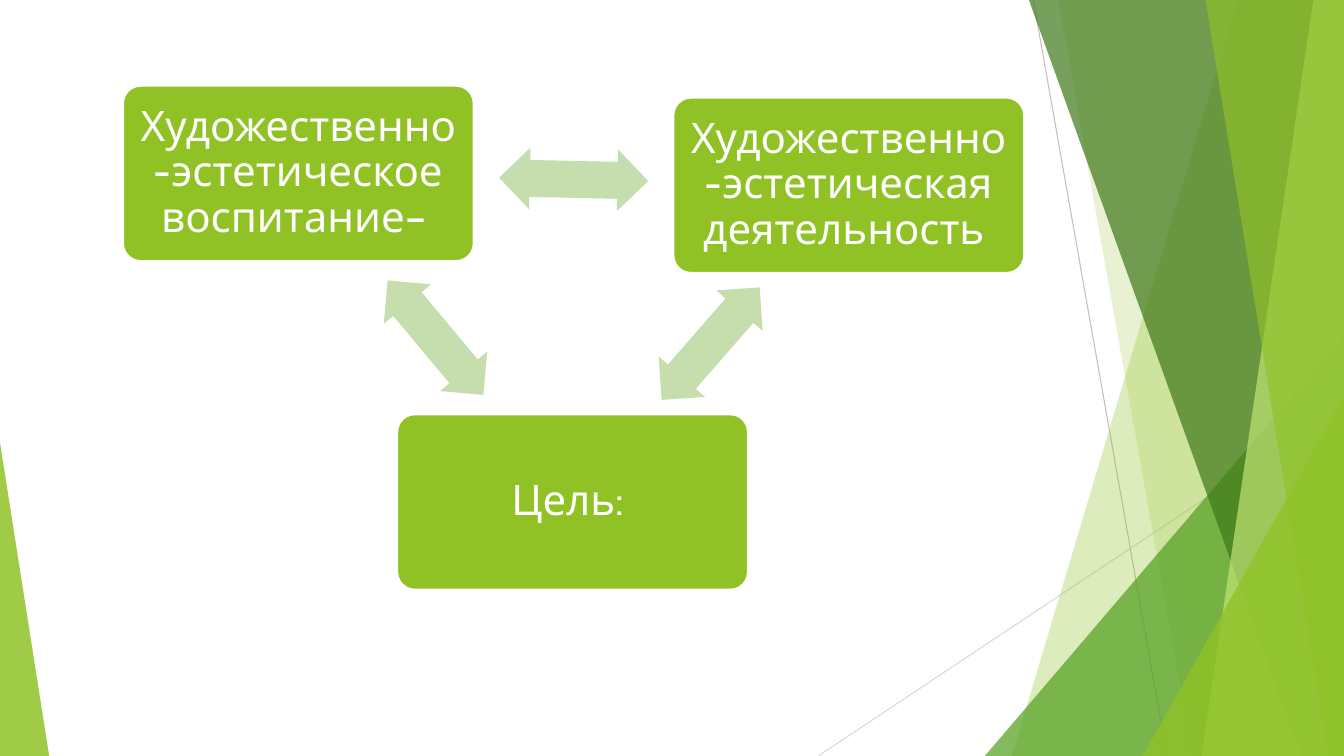
"""Build a slide with a three-part cycle of art education notions."""
import math

import pptx
import pptx.dml.color
import pptx.enum.shapes
import pptx.enum.text
import pptx.oxml.ns
import pptx.oxml.xmlchemy
import pptx.util
from pptx.util import Cm

WIDTH, HEIGHT = 33.87, 19.05
FONT = "Cabin"
COLORS = {
    "green": "90C226", "leaf": "54A021", "forest": "3F7819", "lime": "C0E474",
    "arrow": "C6DDAD", "white": "FFFFFF", "grey": "BFBFBF", "pale": "D9D9D9",
}

RULES = [
    ((26.04, 0), (29.41, HEIGHT), "grey"),
    ((WIDTH, 10.24), (20.62, HEIGHT), "pale"),
]
FACETS = [
    ("band", (31.19, 25.5), "green", 30),
    ("band", (26.67, 30.05), "green", 20),
    ("triangle", (24.82, 8.46, 9.05, 1), "leaf", 72),
    ("band", (25.93, 32.79), "forest", 70),
    ("band", (33.1, 30.28), "lime", 70),
    ("band", (30.38, 33.48), "green", 65),
    ("triangle", (28.8, 9.98, 5.07, 1), "green", 80),
    ("triangle", (0, 11.15, 1.24, 0), "green", 85),
]
CARD_SIZE = (8.84, 4.42)
CARDS = [
    ("Цель: ", 10.01, 10.44),
    ("Художественно-эстетическая деятельность ", 16.97, 2.46),
    ("Художественно-эстетическое воспитание– ", 3.1, 2.16),
]
ARROW_SIZE = (3.76, 1.55)
SHAPES = pptx.enum.shapes.MSO_SHAPE


def rgb(name):
    return pptx.dml.color.RGBColor.from_string(COLORS[name])


def paint(shape, color, opacity=100):
    shape.shadow.inherit = False
    shape.fill.solid()
    shape.fill.fore_color.rgb = rgb(color)
    shape.line.fill.background()
    if opacity < 100:
        tint = shape._element.spPr.find(".//" + pptx.oxml.ns.qn("a:srgbClr"))
        alpha = pptx.oxml.xmlchemy.OxmlElement("a:alpha")
        alpha.set("val", str(opacity * 1000))
        tint.append(alpha)


def add_rule(page, start, end, color):
    rule = page.shapes.add_connector(
        pptx.enum.shapes.MSO_CONNECTOR.STRAIGHT, *map(Cm, start + end))
    rule.line.color.rgb = rgb(color)
    rule.line.width = pptx.util.Pt(0.75)
    rule._element.spPr.append(pptx.oxml.xmlchemy.OxmlElement("a:effectLst"))


def add_facet(page, kind, geometry, color, opacity):
    if kind == "band":
        top_x, bottom_x = geometry
        outline = page.shapes.build_freeform(Cm(top_x), 0)
        corners = [(WIDTH, 0), (WIDTH, HEIGHT), (bottom_x, HEIGHT)]
        outline.add_line_segments([(Cm(x), Cm(y)) for x, y in corners])
        facet = outline.convert_to_shape()
    else:
        left, top, width, apex = geometry
        facet = page.shapes.add_shape(
            SHAPES.ISOSCELES_TRIANGLE, Cm(left), Cm(top), Cm(width), Cm(HEIGHT - top))
        facet.adjustments[0] = apex
    paint(facet, color, opacity)


def add_card(page, text, left, top):
    card = page.shapes.add_shape(
        SHAPES.ROUNDED_RECTANGLE, *map(Cm, (left, top) + CARD_SIZE))
    card.adjustments[0] = 0.1
    paint(card, "green")
    card.line.color.rgb = rgb("white")
    card.line.width = pptx.util.Pt(1.5)
    frame = card.text_frame
    frame.word_wrap = True
    frame.vertical_anchor = pptx.enum.text.MSO_ANCHOR.MIDDLE
    frame.margin_left = frame.margin_right = Cm(0.28)
    frame.margin_top = frame.margin_bottom = Cm(0.3)
    para = frame.paragraphs[0]
    para.alignment = pptx.enum.text.PP_ALIGN.CENTER
    para.line_spacing = 0.9
    span = para.add_run()
    span.text = text
    span.font.name = FONT
    span.font.size = pptx.util.Pt(30)
    span.font.color.rgb = rgb("white")


def add_arrow(page, start, end):
    width, height = ARROW_SIZE
    left = (start[0] + end[0] - width) / 2
    top = (start[1] + end[1] - height) / 2
    arrow = page.shapes.add_shape(
        SHAPES.LEFT_RIGHT_ARROW, Cm(left), Cm(top), Cm(width), Cm(height))
    arrow.adjustments[0] = 0.6
    arrow.adjustments[1] = 0.5
    angle = math.atan2(end[1] - start[1], end[0] - start[0])
    arrow.rotation = math.degrees(angle) % 360
    paint(arrow, "arrow")


def main():
    deck = pptx.Presentation()
    deck.slide_width, deck.slide_height = Cm(WIDTH), Cm(HEIGHT)
    page = deck.slides.add_slide(deck.slide_layouts[6])
    for rule in RULES:
        add_rule(page, *rule)
    for facet in FACETS:
        add_facet(page, *facet)
    for card in CARDS:
        add_card(page, *card)
    centres = [(left + CARD_SIZE[0] / 2, top + CARD_SIZE[1] / 2)
               for _, left, top in CARDS]
    for start, end in zip(centres, centres[1:] + centres[:1]):
        add_arrow(page, start, end)
    deck.save("out.pptx")


if __name__ == "__main__":
    main()
